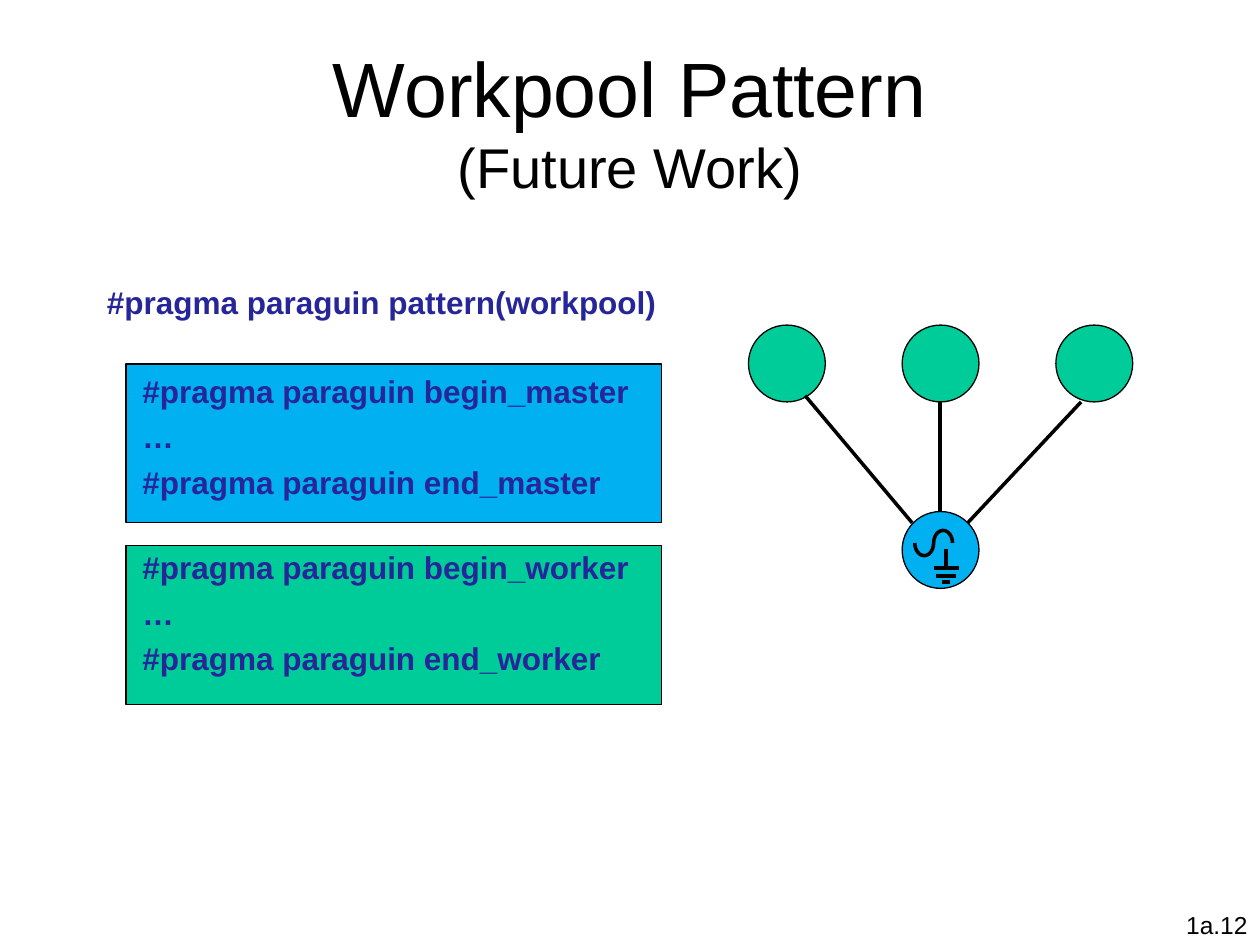
"""Build the workpool pattern slide."""
from dataclasses import dataclass

from lxml.etree import SubElement
from pptx import Presentation
from pptx.dml.color import RGBColor
from pptx.enum.shapes import MSO_CONNECTOR, MSO_SHAPE
from pptx.enum.text import MSO_ANCHOR, MSO_AUTO_SIZE, PP_ALIGN
from pptx.oxml.ns import qn
from pptx.util import Inches, Pt


@dataclass(frozen=True)
class Theme:
    """Colours, font and sizes of the slide."""
    font: str = "Arial"
    ink: str = "000000"
    code: str = "262699"
    worker: str = "00CC99"
    master: str = "00B0F0"
    title: int = 44
    subtitle: int = 32
    body: int = 18
    number: int = 14
    code_gap: float = 4.4
    outline: float = 0.75
    stroke: float = 2


@dataclass(frozen=True)
class CodeBlock:
    """A filled box of pragma lines for one role."""
    role: str
    top: float
    inset: float
    fill: str


@dataclass(frozen=True)
class Stroke:
    """A straight line between two points."""
    x1: float
    y1: float
    x2: float
    y2: float


THEME = Theme()
NODE = 0.61
NODE_TOP = 2.58
HUB_LEFT, HUB_TOP = 7.16, 4.06
NODE_GAP = 1.22
CODE_BLOCKS = (
    CodeBlock("master", 2.89, 0.06, THEME.master),
    CodeBlock("worker", 4.33, 0.02, THEME.worker),
)
LINKS = (
    Stroke(6.39, 3.14, 7.24, 4.15),
    Stroke(8.58, 3.19, 7.68, 4.15),
    Stroke(7.46, 3.19, 7.46, 4.06),
)
GROUND = (
    Stroke(7.51, 4.36, 7.51, 4.51),
    Stroke(7.41, 4.51, 7.61, 4.51),
    Stroke(7.43, 4.57, 7.59, 4.57),
    Stroke(7.48, 4.62, 7.54, 4.62),
)


def apply(target, values: dict) -> None:
    """Set each named attribute on the target."""
    for name, value in values.items():
        setattr(target, name, value)


def add_span(para, text: str, size: int, colour: str = THEME.ink, bold: bool = False) -> None:
    """Add a formatted run to a paragraph."""
    span = para.add_run()
    span.text = text
    apply(span.font, {"name": THEME.font, "size": Pt(size), "bold": bold})
    span.font.color.rgb = RGBColor.from_string(colour)


def add_code(box, lines: tuple[str, ...], left: float, top: float) -> None:
    """Fill a box with lines of code."""
    frame = box.text_frame
    apply(frame, {"word_wrap": True, "vertical_anchor": MSO_ANCHOR.TOP,
                  "margin_left": Inches(left), "margin_top": Inches(top),
                  "margin_right": 0, "margin_bottom": 0})
    for index, line in enumerate(lines):
        para = frame.add_paragraph() if index else frame.paragraphs[0]
        apply(para, {"alignment": PP_ALIGN.LEFT, "space_after": Pt(THEME.code_gap)})
        add_span(para, line, THEME.body, THEME.code, True)


def add_figure(shapes, kind, left: float, top: float, width: float, height: float,
               fill: str, weight: float = THEME.outline):
    """Add a filled and outlined preset shape."""
    figure = shapes.add_shape(kind, Inches(left), Inches(top), Inches(width), Inches(height))
    figure.shadow.inherit = False
    figure.fill.solid()
    figure.fill.fore_color.rgb = RGBColor.from_string(fill)
    figure.line.color.rgb = RGBColor.from_string(THEME.ink)
    figure.line.width = Pt(weight)
    return figure


def add_stroke(shapes, stroke: Stroke) -> None:
    """Draw a straight line without a shadow."""
    line = shapes.add_connector(MSO_CONNECTOR.STRAIGHT, Inches(stroke.x1), Inches(stroke.y1),
                                Inches(stroke.x2), Inches(stroke.y2))
    line.line.color.rgb = RGBColor.from_string(THEME.ink)
    line.line.width = Pt(THEME.stroke)
    SubElement(line._element.spPr, qn("a:effectLst"))


def add_title(page) -> None:
    """Write the title and its subtitle line."""
    title = page.shapes.title
    apply(title, {"left": Inches(0.75), "top": Inches(0.33),
                  "width": Inches(8.5), "height": Inches(1.25)})
    apply(title.text_frame, {"auto_size": MSO_AUTO_SIZE.NONE, "word_wrap": True,
                             "vertical_anchor": MSO_ANCHOR.MIDDLE})
    para = title.text_frame.paragraphs[0]
    para.alignment = PP_ALIGN.CENTER
    add_span(para, "Workpool Pattern", THEME.title)
    para.add_line_break()
    add_span(para, "(Future Work)", THEME.subtitle)


def add_listing(page) -> None:
    """Add the pragma heading and both code blocks."""
    heading = page.shapes.add_textbox(Inches(0.75), Inches(2.2), Inches(4.9), Inches(0.4))
    add_code(heading, ("#pragma paraguin pattern(workpool)",), 0.1, 0.05)
    for block in CODE_BLOCKS:
        box = add_figure(page.shapes, MSO_SHAPE.RECTANGLE, 1, block.top, 4.25, 1.26, block.fill)
        lines = (f"#pragma paraguin begin_{block.role}", "…", f"#pragma paraguin end_{block.role}")
        add_code(box, lines, 0.13, block.inset)


def add_diagram(page) -> None:
    """Draw the workers, their links and the master."""
    for step in (-1, 0, 1):
        add_figure(page.shapes, MSO_SHAPE.OVAL, HUB_LEFT + step * NODE_GAP, NODE_TOP,
                   NODE, NODE, THEME.worker)
    for link in LINKS:
        add_stroke(page.shapes, link)
    master = page.shapes.add_group_shape().shapes
    add_figure(master, MSO_SHAPE.OVAL, HUB_LEFT, HUB_TOP, NODE, NODE, THEME.master)
    for left, rotation in ((7.41, 0), (7.26, 180)):
        wave = add_figure(master, MSO_SHAPE.ARC, left, 4.21, 0.15, 0.2,
                          THEME.master, THEME.stroke)
        wave.adjustments[0] = 108
        wave.adjustments[1] = 0
        wave.rotation = rotation
    for stroke in GROUND:
        add_stroke(master, stroke)


def add_number(page) -> None:
    """Write the page number in the corner."""
    box = page.shapes.add_textbox(Inches(7.92), Inches(7.17), Inches(2.08), Inches(0.33))
    box.text_frame.word_wrap = True
    para = box.text_frame.paragraphs[0]
    para.alignment = PP_ALIGN.RIGHT
    add_span(para, "1a.12", THEME.number)


def main() -> None:
    """Create and save the deck."""
    deck = Presentation()
    apply(deck, {"slide_width": Inches(10), "slide_height": Inches(7.5)})
    page = deck.slides.add_slide(deck.slide_layouts[5])
    add_title(page)
    add_listing(page)
    add_diagram(page)
    add_number(page)
    deck.save("out.pptx")


if __name__ == "__main__":
    main()
